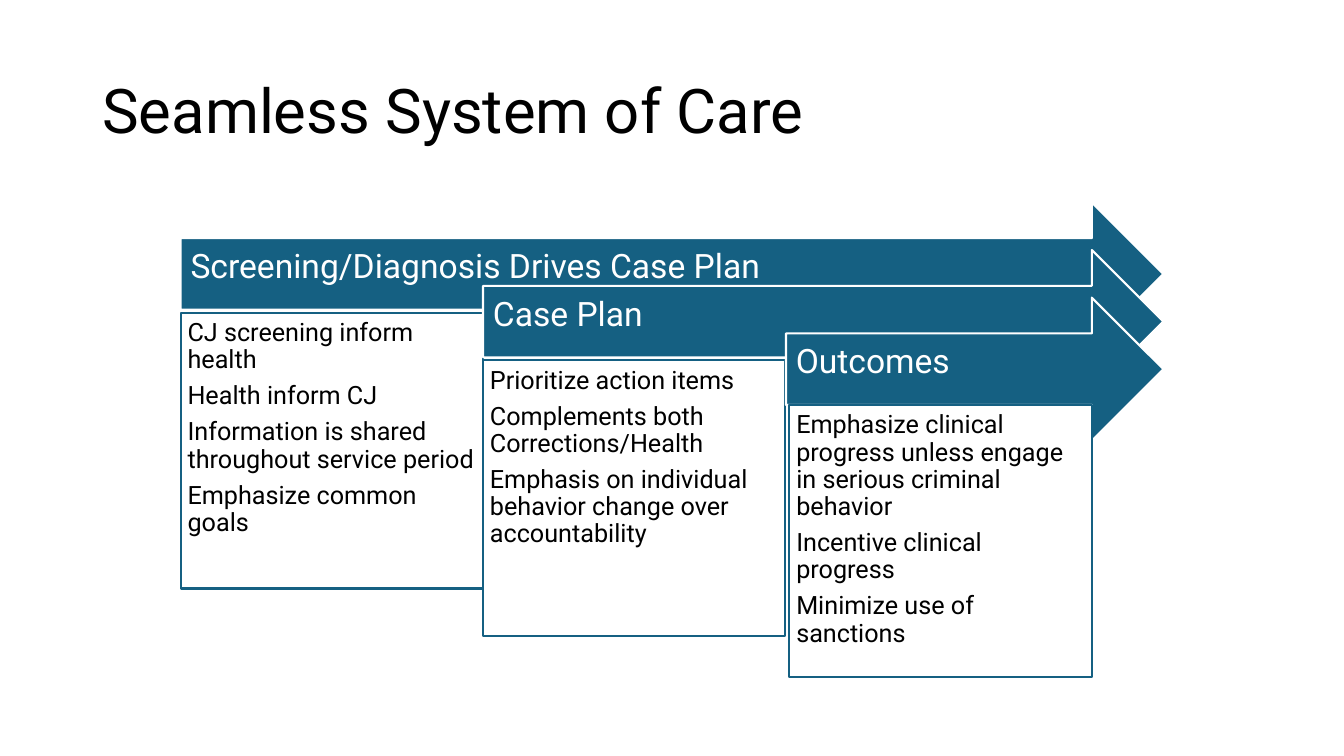
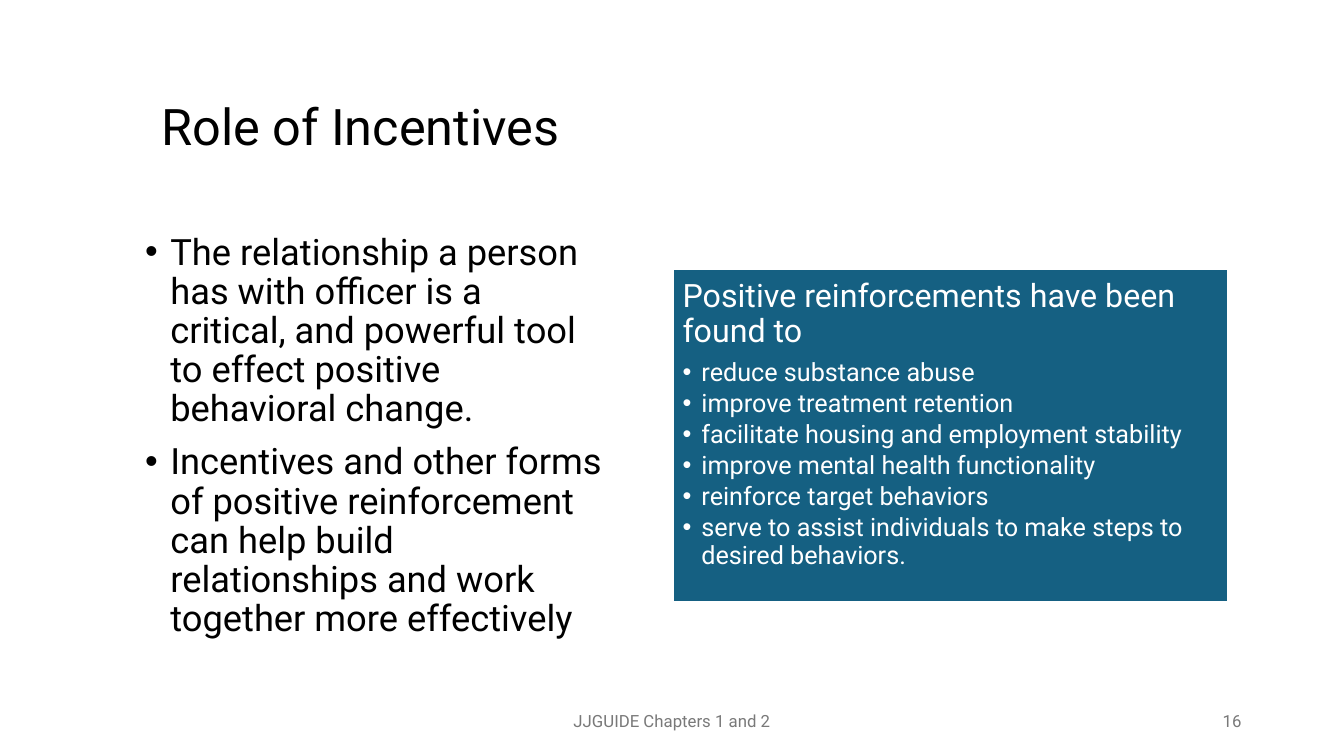
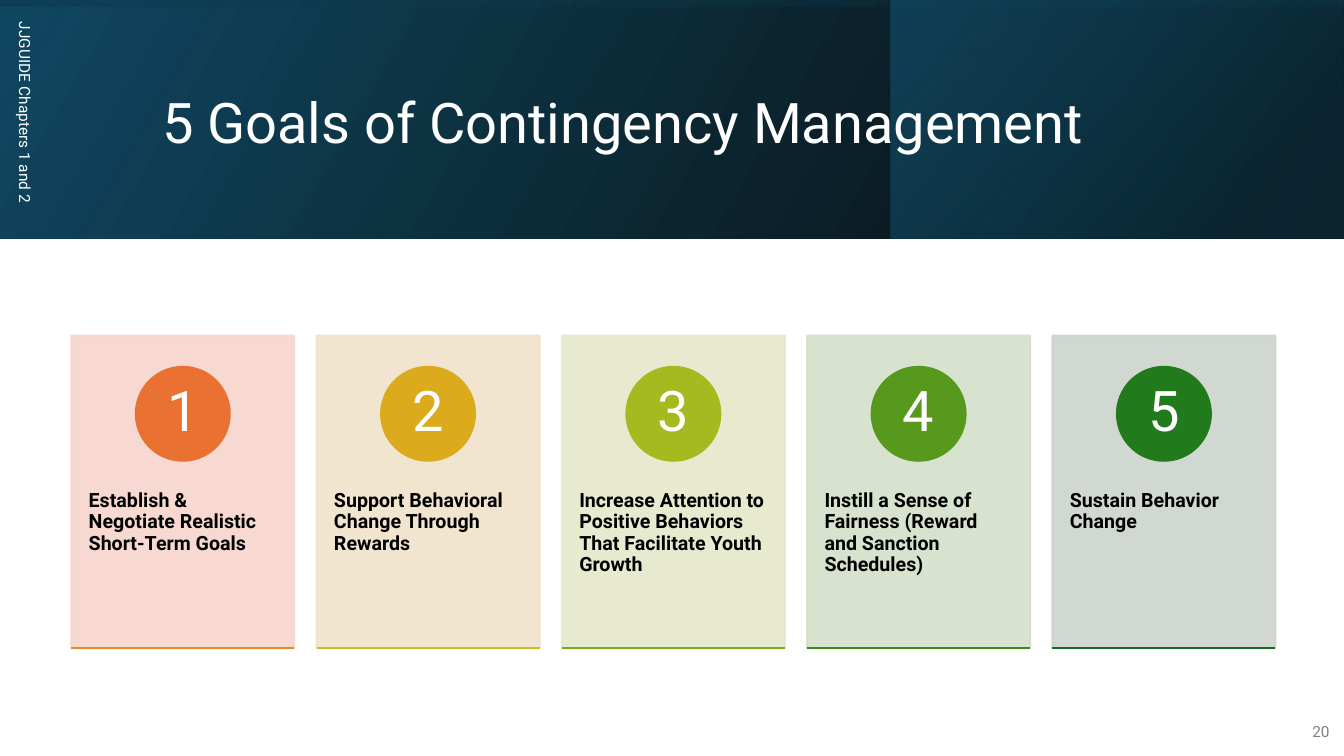
"""Build three slides on seamless care, incentives and contingency management."""
from dataclasses import dataclass

from lxml import etree
from pptx import Presentation
from pptx.dml.color import RGBColor
from pptx.enum.shapes import MSO_CONNECTOR, MSO_SHAPE
from pptx.enum.text import MSO_ANCHOR, MSO_AUTO_SIZE, PP_ALIGN
from pptx.oxml.ns import qn
from pptx.util import Pt

RECTANGLE, ARROW, OVAL = MSO_SHAPE.RECTANGLE, MSO_SHAPE.RIGHT_ARROW, MSO_SHAPE.OVAL
STRAIGHT = MSO_CONNECTOR.STRAIGHT
TOP, MIDDLE = MSO_ANCHOR.TOP, MSO_ANCHOR.MIDDLE
LEFT, CENTER, RIGHT = PP_ALIGN.LEFT, PP_ALIGN.CENTER, PP_ALIGN.RIGHT
NO_AUTOFIT = MSO_AUTO_SIZE.NONE

FONT = "Roboto"
COLORS = {
    "teal": "156082", "white": "FFFFFF", "black": "000000", "footer": "797979",
    "page": "808080", "navy": "104862", "deep": "0B3041",
}
LINE_WIDTH = 1.5
FOOTER = "JJGUIDE Chapters 1 and 2"
TITLE_LAYOUT, BODY_LAYOUT = 5, 1


@dataclass(frozen=True)
class Box:
    left: float
    top: float
    width: float
    height: float

    def lengths(self) -> tuple:
        return Pt(self.left), Pt(self.top), Pt(self.width), Pt(self.height)


@dataclass(frozen=True)
class TextStyle:
    size: float
    color: str = COLORS["black"]
    bold: bool = False
    align: PP_ALIGN = LEFT
    spacing: float = 0.9
    before: float = 0
    after: float = 0
    bullet_indent: float = 0


@dataclass(frozen=True)
class Stage:
    heading: str
    points: tuple[str, ...]
    arrow_left: float
    arrow_top: float
    card: Box


@dataclass(frozen=True)
class Band:
    box: Box
    rotation: float
    angle: float
    stops: tuple[tuple[int, str, int], ...]


@dataclass(frozen=True)
class Goal:
    text: str
    tint: str
    circle: str
    rule: str


STAGES = (
    Stage("Screening/Diagnosis Drives Case Plan",
          ("CJ screening inform health", "Health inform CJ",
           "Information is shared throughout service period",
           "Emphasize common goals"),
          129, 144.6, Box(129, 223.4, 216, 197)),
    Stage("Case Plan",
          ("Prioritize action items", "Complements both Corrections/Health",
           "Emphasis on individual behavior change over accountability"),
          345, 178.6, Box(345, 257.4, 216, 197)),
    Stage("Outcomes",
          ("Emphasize clinical progress unless engage in serious criminal behavior",
           "Incentive clinical progress", "Minimize use of sanctions"),
          561.4, 212.6, Box(563.8, 289.4, 216, 194.4)),
)

RELATIONSHIP_POINTS = (
    "The relationship a person has with officer is a critical, and powerful tool "
    "to effect positive behavioral change.",
    "Incentives and other forms of positive reinforcement can help build "
    "relationships and work together more effectively",
)
REINFORCEMENT_EFFECTS = (
    "reduce substance abuse", "improve treatment retention",
    "facilitate housing and employment stability",
    "improve mental health functionality", "reinforce target behaviors",
    "serve to assist individuals to make steps to desired behaviors.",
)

BANDS = (
    Band(Box(0, 0, 960, 170.6), 0, 330,
         ((0, COLORS["black"], 96), (100, COLORS["navy"], 100))),
    Band(Box(636.5, 0, 323, 170.6), 0, 320,
         ((19, COLORS["deep"], 68), (100, COLORS["teal"], 48))),
    Band(Box(394.7, -394.7, 170.6, 960), 270, 350,
         ((23, COLORS["navy"], 16), (99, COLORS["black"], 45))),
)

GOALS = (
    Goal("Establish & Negotiate Realistic Short-Term Goals", "F7D5CE", "E97132", "E58D25"),
    Goal("Support Behavioral Change Through Rewards", "F0E3CB", "DCAB1D", "CBC11E"),
    Goal("Increase Attention to Positive Behaviors That Facilitate Youth Growth",
         "E5E8CA", "A4BA1E", "7AAA1E"),
    Goal("Instill a Sense of Fairness (Reward and Sanction Schedules)",
         "D3DFCA", "56991D", "398A1C"),
    Goal("Sustain Behavior Change", "CCD4CD", "217A1B", "196B24"),
)


def write(frame, entries, anchor=TOP, insets=(7.2, 3.6, 7.2, 3.6)) -> None:
    frame.word_wrap = True
    frame.auto_size = NO_AUTOFIT
    frame.vertical_anchor = anchor
    frame.margin_left, frame.margin_top, frame.margin_right, frame.margin_bottom = (
        Pt(inset) for inset in insets)
    for index, (text, style) in enumerate(entries):
        paragraph = frame.add_paragraph() if index else frame.paragraphs[0]
        paragraph.alignment = style.align
        paragraph.line_spacing = style.spacing
        paragraph.space_before = Pt(style.before)
        paragraph.space_after = Pt(style.after)
        if style.bullet_indent:
            properties = paragraph._p.get_or_add_pPr()
            properties.set("marL", str(Pt(style.bullet_indent)))
            properties.set("indent", str(-Pt(style.bullet_indent)))
            etree.SubElement(properties, qn("a:buFont"), typeface="Arial")
            etree.SubElement(properties, qn("a:buChar"), char="•")
        run = paragraph.add_run()
        run.text = text
        run.font.name = FONT
        run.font.size = Pt(style.size)
        run.font.bold = style.bold
        run.font.color.rgb = RGBColor.from_string(style.color)


def place(shape, box: Box) -> None:
    shape.left, shape.top, shape.width, shape.height = box.lengths()


def start_slide(deck, layout: int, title: str, box: Box, size: float,
                color: str = COLORS["black"]):
    slide = deck.slides.add_slide(deck.slide_layouts[layout])
    place(slide.shapes.title, box)
    write(slide.shapes.title.text_frame, [(title, TextStyle(size, color))], MIDDLE)
    return slide


def add_label(slide, box: Box, text: str, style: TextStyle, rotation: float = 0) -> None:
    label = slide.shapes.add_textbox(*box.lengths())
    label.rotation = rotation
    write(label.text_frame, [(text, style)], MIDDLE)


def add_block(slide, kind: MSO_SHAPE, box: Box, fill: str, line: str):
    block = slide.shapes.add_shape(kind, *box.lengths())
    block.shadow.inherit = False
    block.fill.solid()
    block.fill.fore_color.rgb = RGBColor.from_string(fill)
    block.line.color.rgb = RGBColor.from_string(line)
    block.line.width = Pt(LINE_WIDTH)
    return block


def set_opacity(shape, percent: int) -> None:
    for color in shape.element.spPr.iter(qn("a:srgbClr")):
        etree.SubElement(color, qn("a:alpha"), val=str(percent * 1000))


def add_band(slide, band: Band) -> None:
    shape = slide.shapes.add_shape(RECTANGLE, *band.box.lengths())
    shape.shadow.inherit = False
    shape.line.fill.background()
    shape.rotation = band.rotation
    properties = shape.element.spPr
    properties.xfrm.set("flipH", "1")
    gradient = etree.Element(qn("a:gradFill"), rotWithShape="1")
    stops = etree.SubElement(gradient, qn("a:gsLst"))
    for position, color, opacity in band.stops:
        stop = etree.SubElement(stops, qn("a:gs"), pos=str(position * 1000))
        tone = etree.SubElement(stop, qn("a:srgbClr"), val=color)
        etree.SubElement(tone, qn("a:alpha"), val=str(opacity * 1000))
    etree.SubElement(gradient, qn("a:lin"), ang=str(int(band.angle * 60000)), scaled="0")
    properties.find(qn("a:prstGeom")).addnext(gradient)


def add_rule(slide, left: float, right: float, top: float, color: str) -> None:
    rule = slide.shapes.add_connector(STRAIGHT, Pt(left), Pt(top), Pt(right), Pt(top))
    rule.line.color.rgb = RGBColor.from_string(color)
    rule.line.width = Pt(LINE_WIDTH)
    etree.SubElement(rule.element.spPr, qn("a:effectLst"))


def build_care_slide(deck) -> None:
    slide = start_slide(deck, TITLE_LAYOUT, "Seamless System of Care",
                        Box(66, 28.8, 828, 104.4), 44)
    arrow_right, arrow_height = 831, 102.2
    heading_style = TextStyle(24, COLORS["white"])
    point_style = TextStyle(18, after=6.3)
    for stage in STAGES:
        arrow_box = Box(stage.arrow_left, stage.arrow_top,
                        arrow_right - stage.arrow_left, arrow_height)
        arrow = add_block(slide, ARROW, arrow_box, COLORS["teal"], COLORS["white"])
        write(arrow.text_frame, [(stage.heading, heading_style)], MIDDLE,
              (7.2, 7.2, 20, 16.2))
        card = add_block(slide, RECTANGLE, stage.card, COLORS["white"], COLORS["teal"])
        write(card.text_frame, [(point, point_style) for point in stage.points],
              insets=(5, 5, 5, 5))


def build_incentives_slide(deck) -> None:
    slide = start_slide(deck, BODY_LAYOUT, "Role of Incentives",
                        Box(108, 54, 756, 76.3), 36)
    relationship = slide.placeholders[1]
    place(relationship, Box(96.5, 163.4, 342.7, 295.2))
    relationship_style = TextStyle(25.9, before=10, bullet_indent=18)
    write(relationship.text_frame,
          [(point, relationship_style) for point in RELATIONSHIP_POINTS])

    panel = add_block(slide, RECTANGLE, Box(480.5, 192.4, 396.5, 237.4),
                      COLORS["teal"], COLORS["white"])
    lead_style = TextStyle(23, COLORS["white"], after=8)
    effect_style = TextStyle(18, COLORS["white"], after=2.7, bullet_indent=13.5)
    write(panel.text_frame,
          [("Positive reinforcements have been found to", lead_style)]
          + [(effect, effect_style) for effect in REINFORCEMENT_EFFECTS],
          insets=(7.2, 7.2, 7.2, 7.2))

    add_label(slide, Box(318, 500.5, 324, 28.8), FOOTER,
              TextStyle(12, COLORS["footer"], align=CENTER, spacing=1))
    add_label(slide, Box(678, 500.5, 216, 28.8), "16",
              TextStyle(12, COLORS["footer"], align=RIGHT, spacing=1))


def build_goals_slide(deck) -> None:
    slide = start_slide(deck, TITLE_LAYOUT, "5 Goals of Contingency Management",
                        Box(108.7, 27.4, 765.4, 123.8), 40, COLORS["white"])
    for band in BANDS:
        add_band(slide, band)
    title = slide.shapes.title.element
    title.getparent().append(title)
    add_label(slide, Box(-144, 156.2, 324, 28.8), FOOTER,
              TextStyle(11, COLORS["white"], spacing=1, after=6), 90)
    add_label(slide, Box(921.6, 508.3, 35.3, 28.8), "20",
              TextStyle(11, COLORS["page"], align=RIGHT, spacing=1, after=6))

    first_left, pitch, card_top = 51, 175.2, 239.8
    card_width, card_height, diameter = 159.2, 223.2, 67
    goal_style = TextStyle(14, bold=True, after=4.9)
    number_style = TextStyle(40, COLORS["white"], align=CENTER)
    for index, goal in enumerate(GOALS):
        left = first_left + index * pitch
        card = add_block(slide, RECTANGLE, Box(left, card_top, card_width, card_height),
                         goal.tint, goal.tint)
        set_opacity(card, 90)
        write(card.text_frame, [(goal.text, goal_style)], insets=(12.4, 110.8, 12.4, 25.8))
        circle_box = Box(left + (card_width - diameter) / 2, card_top + 22.3,
                         diameter, diameter)
        circle = add_block(slide, OVAL, circle_box, goal.circle, goal.circle)
        write(circle.text_frame, [(str(index + 1), number_style)], MIDDLE,
              (5, 0.7, 5, 0.7))
        add_rule(slide, left, left + card_width, card_top + card_height, goal.rule)


def main() -> None:
    deck = Presentation()
    deck.slide_width, deck.slide_height = Pt(960), Pt(540)
    build_care_slide(deck)
    build_incentives_slide(deck)
    build_goals_slide(deck)
    deck.save("out.pptx")


if __name__ == "__main__":
    main()
